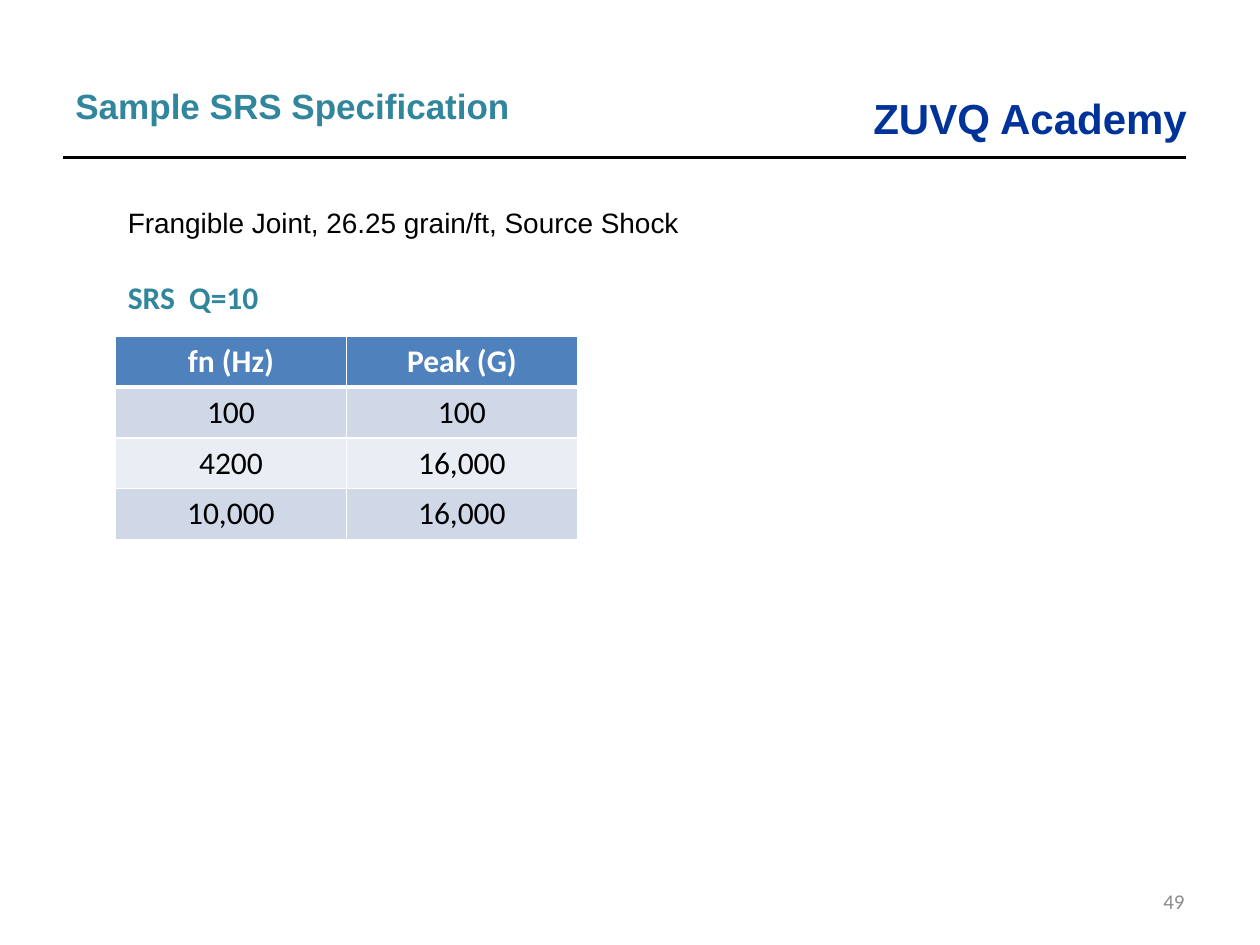
from dataclasses import dataclass

from lxml.etree import SubElement
from pptx import Presentation
from pptx.dml.color import RGBColor
from pptx.enum.shapes import MSO_CONNECTOR
from pptx.enum.text import MSO_ANCHOR, PP_ALIGN
from pptx.oxml.ns import qn
from pptx.util import Inches, Pt

GRID_UNIT = Inches(1) / 12
TEAL, NAVY, BLACK, WHITE, GRAY = "31859C", "003399", "000000", "FFFFFF", "8C8C8C"
HEADER_FILL, BAND_FILLS = "4F81BD", ("D0D8E8", "E9EDF4")
TABLE_ROWS = [
    ("fn (Hz)", "Peak (G)"),
    ("100", "100"),
    ("4200", "16,000"),
    ("10,000", "16,000"),
]


@dataclass(frozen=True)
class Line:
    text: str
    size: int
    font: str
    color: str
    bold: bool = False
    align: PP_ALIGN = PP_ALIGN.LEFT
    before: int = 0
    after: int = 0


@dataclass(frozen=True)
class TextBlock:
    column: float
    row: float
    columns: float
    rows: float
    lines: tuple[Line, ...]
    wrap: bool = True
    anchor: MSO_ANCHOR = MSO_ANCHOR.TOP


BLOCKS = [
    TextBlock(82, 8.2, 32.6, 6, (Line("ZUVQ Academy", 24, "Arial", NAVY, True),), wrap=False),
    TextBlock(86, 83.4, 28, 4.8, (Line("49", 12, "Calibri", GRAY, align=PP_ALIGN.RIGHT),),
              anchor=MSO_ANCHOR.MIDDLE),
    TextBlock(6, 7.5, 60, 5.3,
              (Line("Sample SRS Specification", 20, "Arial", TEAL, True, before=2, after=2),)),
    TextBlock(11, 19, 60, 11.7, (
        Line("Frangible Joint, 26.25 grain/ft, Source Shock", 16, "Arial", BLACK),
        Line("SRS  Q=10", 18, "Calibri", TEAL, True, before=22),
    )),
]


def grid(units: float) -> int:
    return round(units * GRID_UNIT)


def rgb(color: str) -> RGBColor:
    return RGBColor.from_string(color)


def write_line(paragraph, line: Line) -> None:
    paragraph.alignment = line.align
    paragraph.space_before, paragraph.space_after = Pt(line.before), Pt(line.after)
    run = paragraph.add_run()
    run.text = line.text
    run.font.name, run.font.size, run.font.bold = line.font, Pt(line.size), line.bold
    run.font.color.rgb = rgb(line.color)


def add_text(slide, block: TextBlock) -> None:
    shape = slide.shapes.add_textbox(*map(grid, (block.column, block.row, block.columns, block.rows)))
    frame = shape.text_frame
    frame.word_wrap, frame.vertical_anchor = block.wrap, block.anchor
    for index, line in enumerate(block.lines):
        write_line(frame.add_paragraph() if index else frame.paragraphs[0], line)


def add_rule(slide, left: float, right: float, row: float) -> None:
    connector = slide.shapes.add_connector(
        MSO_CONNECTOR.STRAIGHT, grid(left), grid(row), grid(right), grid(row))
    connector.line.color.rgb = rgb(BLACK)
    connector.line.width = Pt(2.25)
    SubElement(connector._element.spPr, qn("a:effectLst"))


def set_borders(cell, widths: dict[str, int]) -> None:
    properties = cell._tc.get_or_add_tcPr()
    for position, (side, width) in enumerate(widths.items()):
        border = SubElement(properties, qn(f"a:{side}"), w=str(Pt(width)))
        fill = SubElement(border, qn("a:solidFill"))
        SubElement(fill, qn("a:srgbClr"), val=WHITE)
        properties.insert(position, border)


def add_specification_table(slide, column: float, row: float, columns: float, rows: float) -> None:
    table = slide.shapes.add_table(
        len(TABLE_ROWS), len(TABLE_ROWS[0]), *map(grid, (column, row, columns, rows))).table
    for row_index, values in enumerate(TABLE_ROWS):
        header = row_index == 0
        fill = HEADER_FILL if header else BAND_FILLS[(row_index - 1) % 2]
        borders = {"lnL": 1, "lnR": 1, "lnT": 3 if row_index == 1 else 1, "lnB": 3 if header else 1}
        for column_index, value in enumerate(values):
            cell = table.cell(row_index, column_index)
            cell.fill.solid()
            cell.fill.fore_color.rgb = rgb(fill)
            set_borders(cell, borders)
            write_line(cell.text_frame.paragraphs[0], Line(
                value, 18, "Calibri", WHITE if header else BLACK, header, PP_ALIGN.CENTER))


def main() -> None:
    presentation = Presentation()
    presentation.slide_width, presentation.slide_height = grid(120), grid(90)
    slide = presentation.slides.add_slide(presentation.slide_layouts[6])
    add_rule(slide, 6, 113, 15)
    for block in BLOCKS:
        add_text(slide, block)
    add_specification_table(slide, 11, 32, 44, 19.4)
    presentation.save("out.pptx")


if __name__ == "__main__":
    main()
